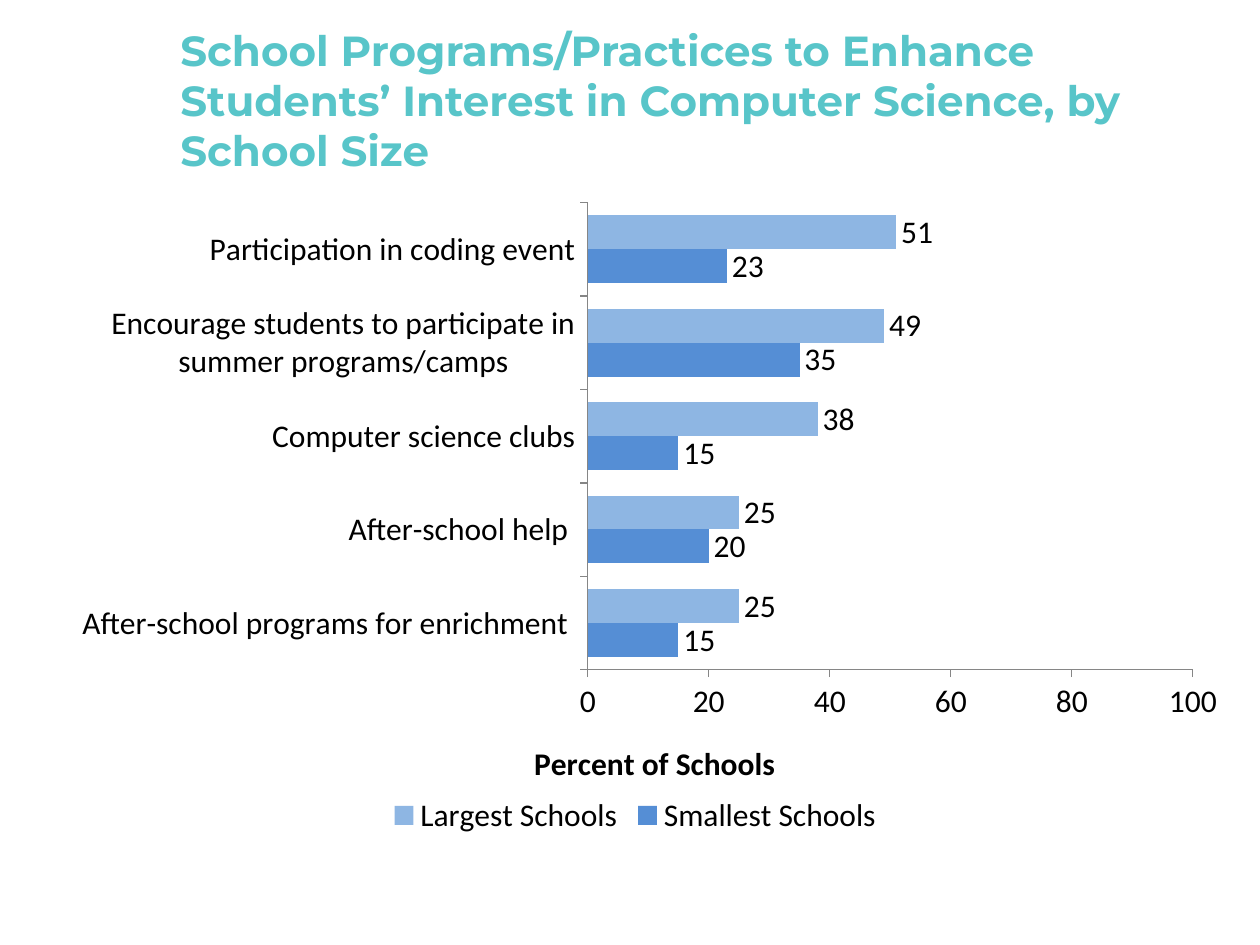
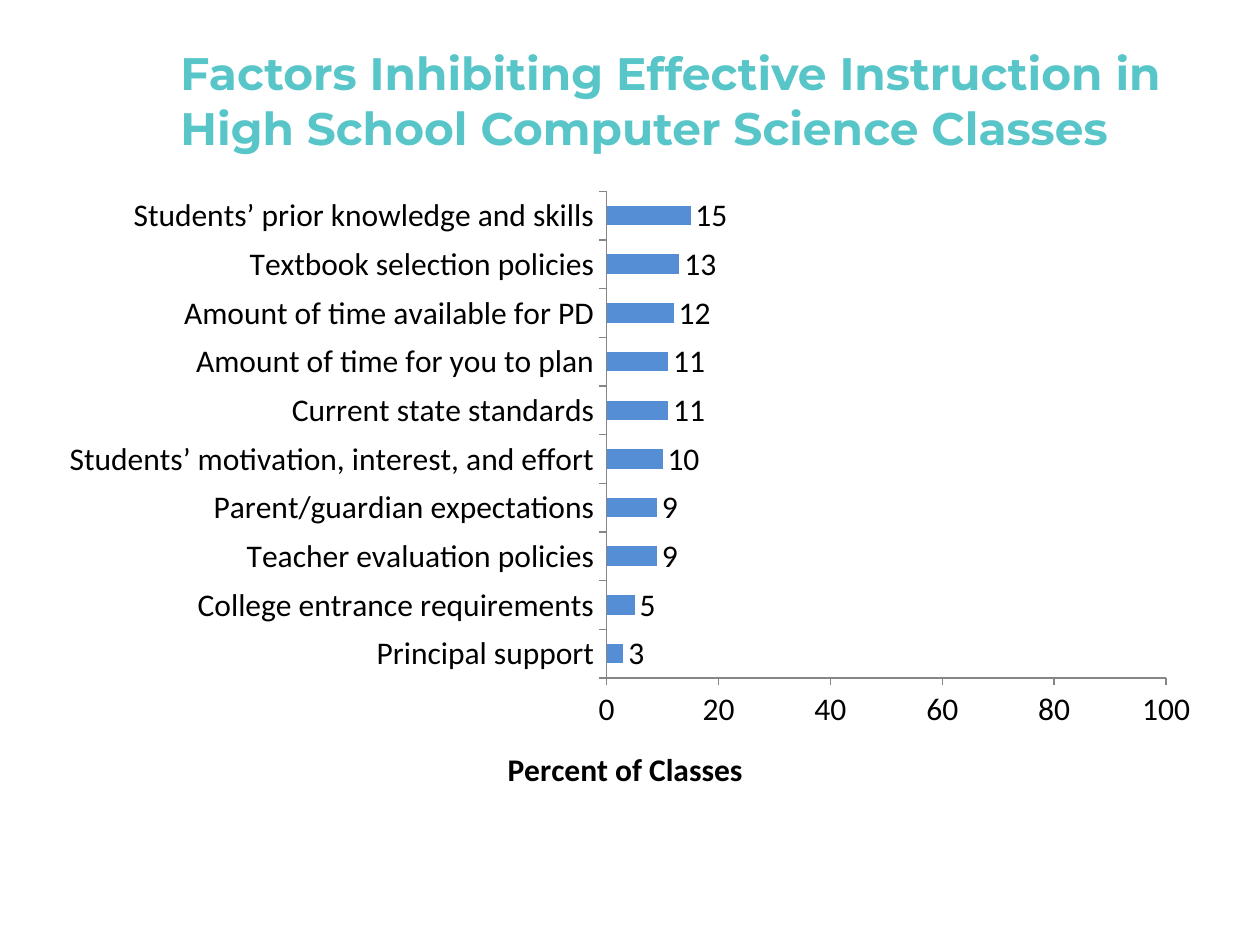
"""Builds two slides of bar charts on computer science in schools."""
from lxml import etree
from pptx import Presentation
from pptx.chart.data import CategoryChartData
from pptx.dml.color import RGBColor
from pptx.enum import chart as ch, text
from pptx.oxml import ns
from pptx.util import Pt

hues = {"title": "58C5C9", "text": "000000", "axis": "868686",
        "blue": "558ED5", "light": "8EB6E3"}


def paint(font, size, hue="text", bold=False, face="Calibri"):
    font.name, font.size, font.bold = face, Pt(size), bold
    font.color.rgb = RGBColor.from_string(hues[hue])


def place(node, spot, inner=False):
    for old in node.findall(ns.qn("c:layout")):
        node.remove(old)
    layout = etree.Element(ns.qn("c:layout"))
    man = etree.SubElement(layout, ns.qn("c:manualLayout"))
    parts = [("layoutTarget", "inner")] if inner else []
    parts += [("xMode", "edge"), ("yMode", "edge")]
    parts += zip("xywh", spot)
    for tag, val in parts:
        etree.SubElement(man, ns.qn("c:" + tag)).set("val", str(val))
    node.insert(1 if node.tag == ns.qn("c:title") else 0, layout)


pages = [
    {"title": "School Programs/Practices to Enhance Students’ Interest in "
              "Computer Science, by School Size",
     "size": 24, "wide": 588, "box": (24, 104.5, 678, 376), "gap": 75,
     "plot": (0.46, 0.03, 0.51, 0.71), "axis": "Percent of Schools",
     "spot": (0.41, 0.84),
     "cats": ["After-school programs for enrichment ", "After-school help ",
              "Computer science clubs",
              "Encourage students to participate in summer programs/camps",
              "Participation in coding event"],
     "rows": [("Smallest Schools", "blue", (15, 20, 15, 35, 23)),
              ("Largest Schools", "light", (25, 25, 38, 49, 51))]},
    {"title": "Factors Inhibiting Effective Instruction in High School "
              "Computer Science Classes",
     "size": 26, "wide": 612, "box": (27, 102, 666, 366), "gap": 150,
     "plot": (0.48, 0.02, 0.48, 0.76), "axis": "Percent of Classes",
     "spot": (0.39, 0.88),
     "cats": ["Principal support", "College entrance requirements",
              "Teacher evaluation policies", "Parent/guardian expectations",
              "Students’ motivation, interest, and effort",
              "Current state standards", "Amount of time for you to plan",
              "Amount of time available for PD", "Textbook selection policies",
              "Students’ prior knowledge and skills"],
     "rows": [("Series 1", "blue", (3, 5, 9, 9, 10, 11, 11, 12, 13, 15))]},
]

deck = Presentation()
deck.slide_width, deck.slide_height = Pt(720), Pt(540)

for page in pages:
    slide = deck.slides.add_slide(deck.slide_layouts[6])

    data = CategoryChartData()
    data.categories = page["cats"]
    for name, hue, vals in page["rows"]:
        data.add_series(name, vals)
    chart = slide.shapes.add_chart(
        ch.XL_CHART_TYPE.BAR_CLUSTERED, *map(Pt, page["box"]), data).chart
    paint(chart.font, 18)
    chart.has_title = False
    chart.has_legend = len(page["rows"]) > 1
    if chart.has_legend:
        chart.legend.position = ch.XL_LEGEND_POSITION.BOTTOM
        chart.legend.include_in_layout = False
        paint(chart.legend.font, 18)

    bars = chart.plots[0]
    bars.gap_width, bars.overlap = page["gap"], 0
    bars.vary_by_categories = False
    for bar, (name, hue, vals) in zip(bars.series, page["rows"]):
        bar.format.fill.solid()
        bar.format.fill.fore_color.rgb = RGBColor.from_string(hues[hue])
        tags = bar.data_labels
        tags.show_value = True
        tags.position = ch.XL_LABEL_POSITION.OUTSIDE_END
        paint(tags.font, 18)

    scale = chart.value_axis
    for axis in (chart.category_axis, scale):
        axis.has_major_gridlines = False
        axis.major_tick_mark = ch.XL_TICK_MARK.OUTSIDE
        axis.minor_tick_mark = ch.XL_TICK_MARK.NONE
        axis.format.line.width = Pt(0.75)
        axis.format.line.color.rgb = RGBColor.from_string(hues["axis"])
        paint(axis.tick_labels.font, 18)
    scale.minimum_scale, scale.maximum_scale, scale.major_unit = 0, 100, 20
    head = scale.axis_title
    head.text_frame.text = page["axis"]
    paint(head.text_frame.paragraphs[0].font, 18, bold=True)
    place(head._element, page["spot"])
    area = chart._chartSpace.find(".//" + ns.qn("c:plotArea"))
    place(area, page["plot"], inner=True)

    box = slide.shapes.add_textbox(Pt(96), Pt(12), Pt(page["wide"]), Pt(90))
    frame = box.text_frame
    frame.word_wrap = True
    frame.vertical_anchor = text.MSO_ANCHOR.MIDDLE
    frame.text = page["title"]
    paint(frame.paragraphs[0].font, page["size"], "title", True, "Montserrat")

deck.save("out.pptx")
